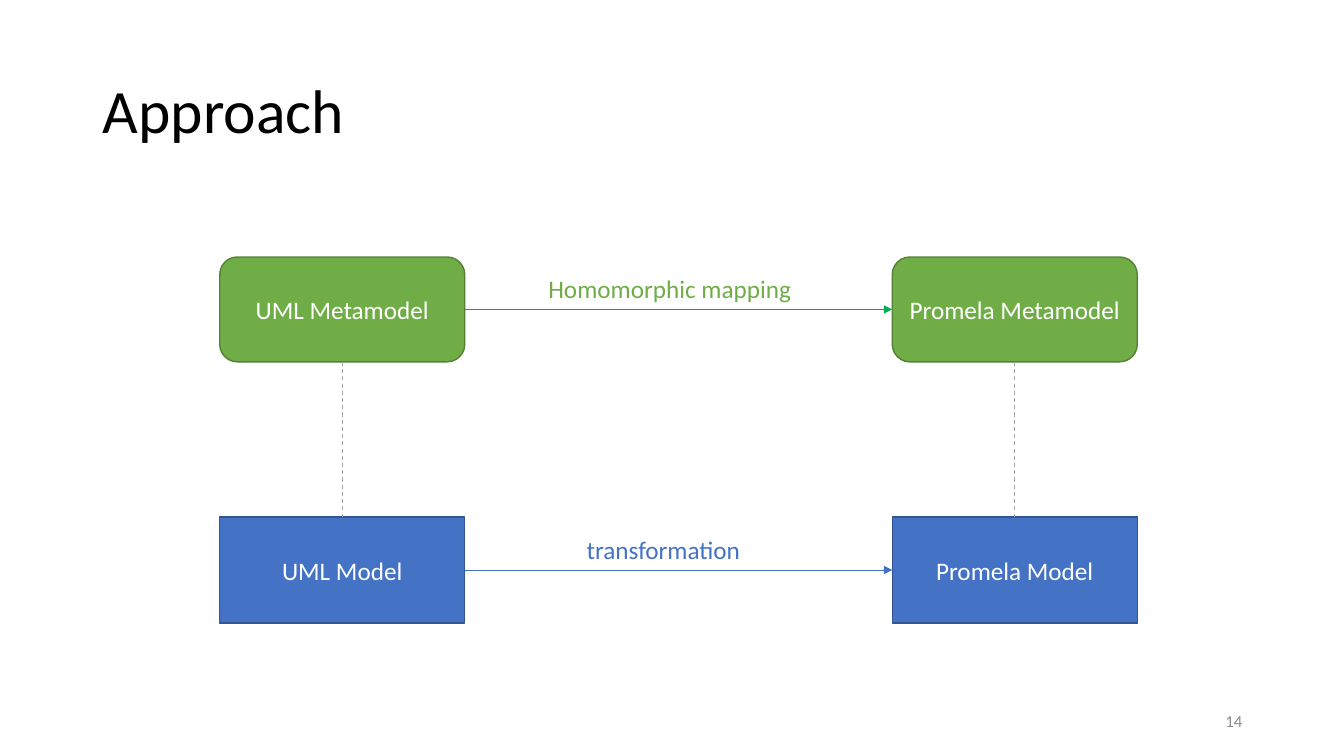
"""Build the Approach slide: metamodel mapping above model transformation."""
from lxml.etree import SubElement
from pptx import Presentation
from pptx.dml.color import RGBColor
from pptx.enum.dml import MSO_LINE
from pptx.enum.shapes import MSO_CONNECTOR, MSO_SHAPE
from pptx.enum.text import MSO_ANCHOR, PP_ALIGN
from pptx.oxml.ns import qn
from pptx.util import Inches, Pt


def write(shape, text, size, color, align, anchor):
    frame = shape.text_frame
    frame.text = text
    frame.word_wrap = True
    frame.vertical_anchor = anchor
    para = frame.paragraphs[0]
    para.alignment = align
    para.font.name = "Calibri"
    para.font.size = Pt(size)
    para.font.color.rgb = RGBColor.from_string(color)
    return para


def connect(start, start_side, end, end_side, color, width):
    connector = page.shapes.add_connector(MSO_CONNECTOR.STRAIGHT, 0, 0, 0, 0)
    connector.begin_connect(start, start_side)
    connector.end_connect(end, end_side)
    connector.line.color.rgb = RGBColor.from_string(color)
    connector.line.width = Pt(width)
    line_xml = connector.line._get_or_add_ln()
    SubElement(connector._element.spPr, qn("a:effectLst"))
    return connector, line_xml


deck = Presentation()
deck.slide_width = Inches(13.33)
deck.slide_height = Inches(7.5)
page = deck.slides.add_slide(deck.slide_layouts[5])

title = page.shapes.title
title.left, title.top = Inches(0.92), Inches(0.4)
title.width, title.height = Inches(11.5), Inches(1.45)
write(title, "Approach", 44, "000000", PP_ALIGN.LEFT, MSO_ANCHOR.MIDDLE).line_spacing = 0.9

levels = [
    ("Metamodel", MSO_SHAPE.ROUNDED_RECTANGLE, 2.55, 1.04, "70AD47", "538035", "00B050",
     "Homomorphic mapping", 5.34, 2.66, 2.86),
    ("Model", MSO_SHAPE.RECTANGLE, 5.13, 1.05, "4472C4", "325491", "4472C4",
     "transformation", 5.72, 5.25, 1.9),
]
rows = []
for (level, outline, top, height, fill, border, arrow_color,
     caption, caption_left, caption_top, caption_width) in levels:
    row = []
    for language, left in (("UML", 2.18), ("Promela", 8.85)):
        box = page.shapes.add_shape(outline, Inches(left), Inches(top), Inches(2.43), Inches(height))
        box.shadow.inherit = False
        box.fill.solid()
        box.fill.fore_color.rgb = RGBColor.from_string(fill)
        box.line.color.rgb = RGBColor.from_string(border)
        box.line.width = Pt(1)
        write(box, f"{language} {level}", 18, "FFFFFF", PP_ALIGN.CENTER, MSO_ANCHOR.MIDDLE)
        row.append(box)
    rows.append(row)

    arrow, line_xml = connect(row[0], 3, row[1], 1, arrow_color, 0.5)
    SubElement(line_xml, qn("a:tailEnd"), type="triangle")

    label = page.shapes.add_textbox(
        Inches(caption_left), Inches(caption_top), Inches(caption_width), Inches(0.4))
    write(label, caption, 18, fill, PP_ALIGN.LEFT, MSO_ANCHOR.TOP)

for metamodel, model in zip(*rows):
    link, line_xml = connect(metamodel, 2, model, 0, "A5A5A5", 0.75)
    link.line.dash_style = MSO_LINE.DASH

number = page.shapes.add_textbox(Inches(9.42), Inches(6.95), Inches(3), Inches(0.4))
write(number, "14", 12, "8C8C8C", PP_ALIGN.RIGHT, MSO_ANCHOR.MIDDLE)

deck.save("out.pptx")
